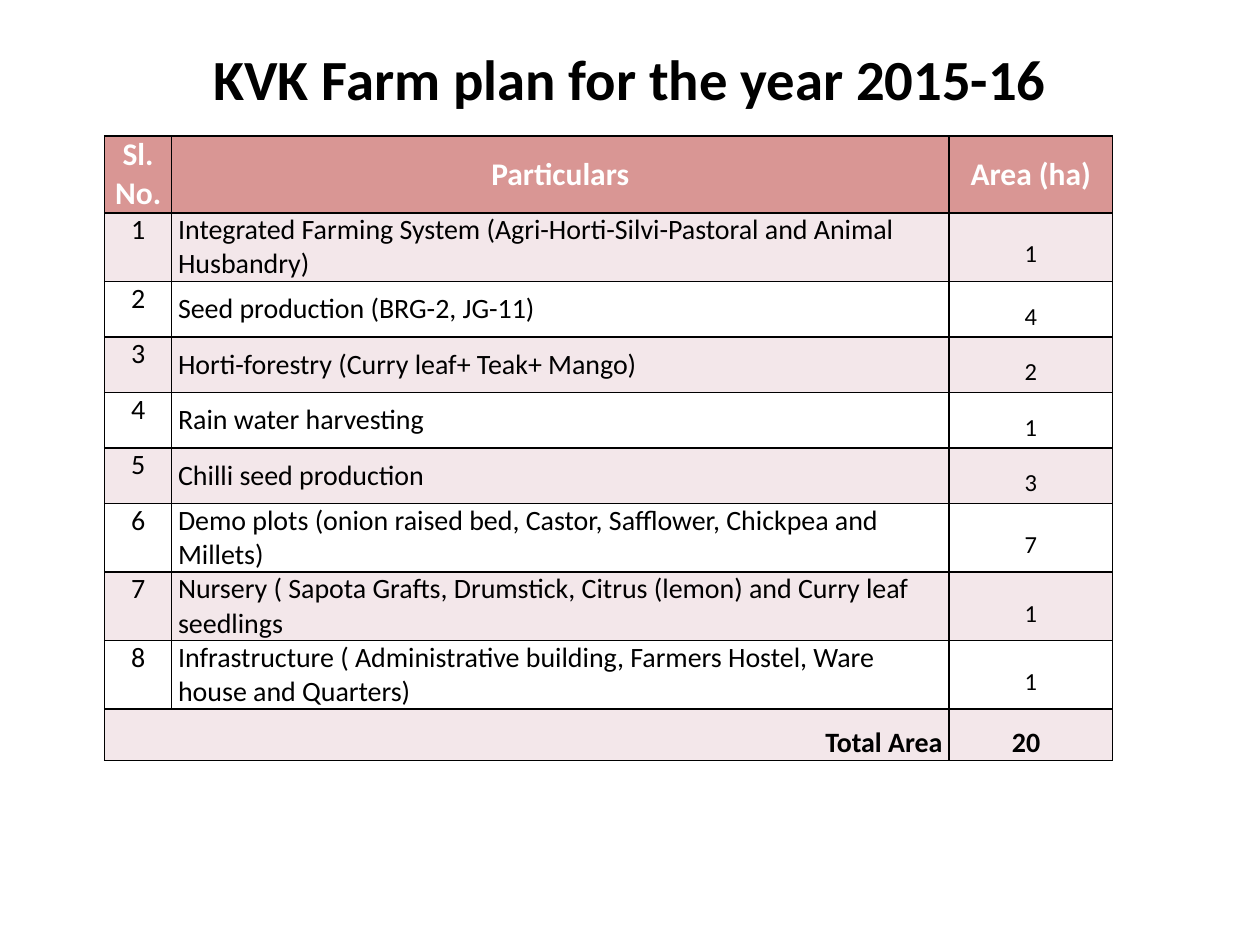
import pptx
import pptx.util
import pptx.dml.color
import pptx.enum.text
import pptx.oxml
from pptx.util import Cm

ALIGN = pptx.enum.text.PP_ALIGN
ANCHOR = pptx.enum.text.MSO_ANCHOR


def rgb(value):
    return pptx.dml.color.RGBColor.from_string(value)


class Deck:
    font = "Calibri"
    black = "000000"
    white = "FFFFFF"
    header = "D99694"
    band = "F3E7EA"

    def __init__(self, prs):
        self.prs = prs
        self.s = prs.slides.add_slide(prs.slide_layouts[5])

    def text(self, tf, text, size, bold=False, color=black, align=ALIGN.LEFT, spacing=None):
        tf.text = text
        for p in tf.paragraphs:
            p.alignment = align
            if spacing:
                p.line_spacing = spacing
            for r in p.runs:
                r.font.name = self.font
                r.font.size = pptx.util.Pt(size)
                r.font.bold = bold
                r.font.color.rgb = rgb(color)

    def title(self, text):
        sp = self.s.shapes.title
        sp.left, sp.top, sp.width, sp.height = Cm(1.27), Cm(0.76), Cm(22.86), Cm(3.18)
        tf = sp.text_frame
        tf.vertical_anchor = ANCHOR.MIDDLE
        tf.margin_bottom = Cm(1.68)
        self.text(tf, text, 32.4, True, align=ALIGN.CENTER)

    def table(self, left, top, height, widths, heights):
        gf = self.s.shapes.add_table(len(heights), len(widths), left, top, sum(widths), height)
        for column, width in zip(gf.table.columns, widths):
            column.width = width
        for row, row_height in zip(gf.table.rows, heights):
            row.height = row_height
        gf.height = height
        return gf.table

    def cell(self, cell, text, size, fill=None, anchor=ANCHOR.MIDDLE, **style):
        cell.margin_left = cell.margin_right = Cm(0.13)
        cell.margin_top = cell.margin_bottom = 0
        cell.vertical_anchor = anchor
        self.text(cell.text_frame, text, size, **style)
        self.borders(cell)
        if fill:
            cell.fill.solid()
            cell.fill.fore_color.rgb = rgb(fill)
        else:
            cell.fill.background()

    def borders(self, cell):
        tcPr = cell._tc.get_or_add_tcPr()
        for side in ("lnL", "lnR", "lnT", "lnB"):
            tcPr.append(pptx.oxml.parse_xml(
                f'<a:{side} xmlns:a="http://schemas.openxmlformats.org/drawingml/2006/main" w="12700">'
                f'<a:solidFill><a:srgbClr val="{self.black}"/></a:solidFill></a:{side}>'))


def main():
    prs = pptx.Presentation()
    prs.slide_width, prs.slide_height = Cm(25.4), Cm(19.05)
    deck = Deck(prs)
    deck.title("KVK Farm plan for the year 2015-16")

    headings = ["Sl.\nNo.", "Particulars", "Area (ha)"]
    plan = [
        ("Integrated Farming System (Agri-Horti-Silvi-Pastoral and Animal Husbandry)", 1),
        ("Seed production (BRG-2, JG-11)", 4),
        ("Horti-forestry (Curry leaf+ Teak+ Mango)", 2),
        ("Rain water harvesting", 1),
        ("Chilli seed production", 3),
        ("Demo plots (onion raised bed, Castor, Safflower, Chickpea and Millets)", 7),
        ("Nursery ( Sapota Grafts, Drumstick, Citrus (lemon) and Curry leaf seedlings", 1),
        ("Infrastructure ( Administrative building, Farmers Hostel, Ware house and Quarters)", 1),
    ]
    widths = [Cm(1.35), Cm(15.67), Cm(3.3)]
    heights = [Cm(1.12)] * (len(plan) + 1) + [Cm(0.85)]
    table = deck.table(Cm(2.11), Cm(2.74), Cm(12.47), widths, heights)

    for i, heading in enumerate(headings):
        deck.cell(table.cell(0, i), heading, 18, deck.header,
                  bold=True, color=deck.white, align=ALIGN.CENTER)

    for n, (particulars, area) in enumerate(plan, 1):
        fill = deck.band if n % 2 else None
        deck.cell(table.cell(n, 0), str(n), 16, fill, ANCHOR.TOP, align=ALIGN.CENTER)
        deck.cell(table.cell(n, 1), particulars, 16, fill)
        deck.cell(table.cell(n, 2), str(area), 14, fill, align=ALIGN.CENTER, spacing=1.5)

    last = len(plan) + 1
    table.cell(last, 0).merge(table.cell(last, 1))
    deck.borders(table.cell(last, 1))
    deck.cell(table.cell(last, 0), "Total Area", 16, deck.band, ANCHOR.TOP,
              bold=True, align=ALIGN.RIGHT, spacing=1.5)
    total = table.cell(last, 2)
    deck.cell(total, str(sum(area for _, area in plan)), 16, deck.band, ANCHOR.TOP,
              bold=True, spacing=1.5)
    total.text_frame.paragraphs[0]._p.get_or_add_pPr().set("marL", str(Cm(1.14)))

    prs.save("out.pptx")


if __name__ == "__main__":
    main()
